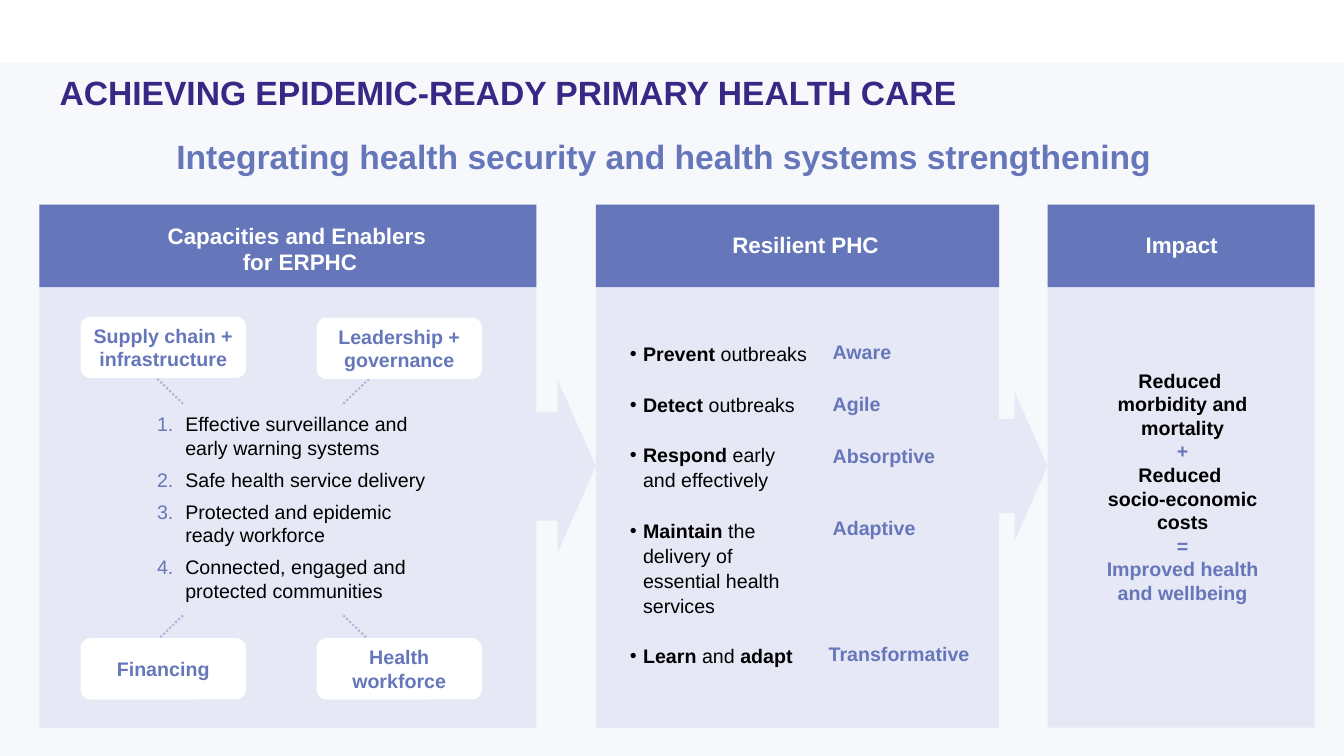
from lxml import etree
from pptx import Presentation
from pptx import util as u
from pptx.dml.color import RGBColor
from pptx.enum import dml, shapes, text
from pptx.oxml import ns

INDIGO = RGBColor(0x38, 0x28, 0x86)
BLUE = RGBColor(0x65, 0x77, 0xBA)
PALE = RGBColor(0xE6, 0xE8, 0xF5)
LILAC = RGBColor(0xB2, 0xB1, 0xD9)
WHITE = RGBColor(0xFF, 0xFF, 0xFF)
BLACK = RGBColor(0, 0, 0)

RECTANGLE = shapes.MSO_SHAPE.RECTANGLE
CALLOUT = shapes.MSO_SHAPE.RIGHT_ARROW_CALLOUT
ROUNDED = shapes.MSO_SHAPE.ROUNDED_RECTANGLE
CENTER = text.PP_ALIGN.CENTER


def inches(*lengths):
    return [u.Inches(length) for length in lengths]


def add_element(parent, tag, **attributes):
    return etree.SubElement(parent, ns.qn(tag), attributes)


class SlideBuilder:
    """Holds the slide and its text style."""

    font = "Arial"
    size = 14

    def __init__(self, slide):
        self.slide = slide

    def runs(self, paragraph, parts, size=None):
        """Add (wording, colour, bold) parts; a newline becomes a line break."""
        for wording, color, bold in parts:
            for index, line in enumerate(wording.split("\n")):
                if index:
                    paragraph.add_line_break()
                if not line:
                    continue
                run = paragraph.add_run()
                run.text = line
                run.font.name = self.font
                run.font.size = u.Pt(size or self.size)
                run.font.bold = bold
                run.font.color.rgb = color

    def title(self, wording, box):
        title = self.slide.shapes.title
        title.left, title.top, title.width, title.height = inches(*box)
        frame = title.text_frame
        frame.margin_left = frame.margin_top = frame.margin_right = 0
        frame.margin_bottom = u.Inches(0.05)
        frame.vertical_anchor = text.MSO_ANCHOR.TOP
        paragraph = frame.paragraphs[0]
        paragraph.alignment = text.PP_ALIGN.LEFT
        paragraph.line_spacing = 0.9
        self.runs(paragraph, [(wording, INDIGO, True)], 24)
        title.element.getparent().append(title.element)  # above the background band

    def shape(self, kind, box, fill, adjustments=()):
        shape = self.slide.shapes.add_shape(kind, *inches(*box))
        shape.shadow.inherit = False
        shape.fill.solid()
        shape.fill.fore_color.rgb = fill
        shape.line.fill.background()
        for index, value in enumerate(adjustments):
            shape.adjustments[index] = value
        return shape

    def band(self, box, fill, opacity):
        shape = self.shape(RECTANGLE, box, fill)
        color = shape.element.spPr.find(".//" + ns.qn("a:srgbClr"))
        add_element(color, "a:alpha", val=str(opacity * 1000))

    def enabler(self, box, wording):
        shape = self.shape(ROUNDED, box, WHITE)
        shape.text_frame.vertical_anchor = text.MSO_ANCHOR.MIDDLE
        paragraph = shape.text_frame.paragraphs[0]
        paragraph.alignment = CENTER
        self.runs(paragraph, [(wording, BLUE, True)])

    def frame(self, box):
        frame = self.slide.shapes.add_textbox(*inches(*box)).text_frame
        frame.word_wrap = True
        frame.auto_size = text.MSO_AUTO_SIZE.SHAPE_TO_FIT_TEXT
        return frame

    def text(self, box, parts, size=None, alignment=None):
        paragraph = self.frame(box).paragraphs[0]
        paragraph.alignment = alignment
        self.runs(paragraph, parts, size)

    def list(self, box, items, indent, hanging, after, spacing=None, numbered=False):
        frame = self.frame(box)
        for index, parts in enumerate(items):
            paragraph = frame.add_paragraph() if index else frame.paragraphs[0]
            properties = paragraph._p.get_or_add_pPr()
            properties.set("marL", str(u.Inches(indent)))
            properties.set("indent", str(-u.Inches(hanging)))
            if numbered:
                color = add_element(properties, "a:buClr")
                add_element(color, "a:srgbClr", val=str(BLUE))
                add_element(properties, "a:buFont", typeface=self.font)
                add_element(properties, "a:buAutoNum", type="arabicPeriod")
            else:
                add_element(properties, "a:buFont", typeface=self.font)
                add_element(properties, "a:buChar", char="•")
            paragraph.space_after = u.Pt(after)
            if spacing:
                paragraph.line_spacing = spacing
            self.runs(paragraph, parts)

    def dotted_line(self, start, end):
        line = self.slide.shapes.add_connector(
            shapes.MSO_CONNECTOR.STRAIGHT, *inches(*start, *end))
        line.line.color.rgb = LILAC
        line.line.width = u.Pt(1.5)
        line.line.dash_style = dml.MSO_LINE.ROUND_DOT
        add_element(line.element.spPr, "a:effectLst")


def main():
    presentation = Presentation()
    presentation.slide_width, presentation.slide_height = inches(13.33, 7.5)
    builder = SlideBuilder(presentation.slides.add_slide(presentation.slide_layouts[5]))

    builder.band((0, 0.62, 13.33, 6.88), PALE, 30)
    builder.title("ACHIEVING EPIDEMIC-READY PRIMARY HEALTH CARE", (0.59, 0.76, 12.15, 0.83))
    builder.text((1.62, 1.3, 10.02, 0.5),
                 [("Integrating health security and health systems strengthening ", BLUE, True)],
                 24, CENTER)

    # Panels and their headings
    top, height, heading_height = 2.03, 5.19, 0.82
    arrow = (0.208, 0.165, 0.073, 0.893)
    panels = [
        (CALLOUT, 5.91, 4.48, arrow, 4, (6.51, 2.24, 2.96, 0.37), "Resilient PHC"),
        (RECTANGLE, 10.39, 2.65, (), 2.65, (10.24, 2.24, 2.96, 0.37), "Impact"),
        (CALLOUT, 0.39, 5.52, arrow, 4.93, (0.89, 2.15, 4.17, 0.64),
         "Capacities and Enablers \nfor ERPHC"),
    ]
    for kind, left, width, adjustments, heading_width, label_box, heading in panels:
        builder.shape(kind, (left, top, width, height), PALE, adjustments)
        builder.shape(RECTANGLE, (left, top, heading_width, heading_height), BLUE)
        builder.text(label_box, [(heading, WHITE, True)], 16, CENTER)

    # Capacities and enablers
    capacities = [
        "Effective surveillance and early warning systems",
        "Safe health service delivery",
        "Protected and epidemic ready workforce",
        "Connected, engaged and protected communities",
    ]
    builder.list((1.36, 4.04, 3, 2), [[(item, BLACK, False)] for item in capacities],
                 indent=0.38, hanging=0.28, after=6, numbered=True)
    for outer_x, inner_x in ((1.5, 1.83), (3.72, 3.39)):
        for outer_y, inner_y in ((3.7, 4.02), (6.41, 6.09)):
            builder.dotted_line((outer_x, outer_y), (inner_x, inner_y))
    for left, y, wording in (
        (0.8, 3.14, "Supply chain + infrastructure"),
        (3.14, 3.15, "Leadership + governance"),
        (0.8, 6.33, "Financing"),
        (3.14, 6.33, "Health workforce"),
    ):
        builder.enabler((left, y, 1.64, 0.61), wording)

    # Resilient primary health care
    actions = [
        [("Prevent ", BLACK, True), ("outbreaks", BLACK, False)],
        [("Detect", BLACK, True), (" outbreaks", BLACK, False)],
        [("Respond ", BLACK, True), ("early and effectively", BLACK, False)],
        [("Maintain ", BLACK, True),
         ("the delivery of essential health services", BLACK, False)],
        [("Learn ", BLACK, True), ("and ", BLACK, False), ("adapt", BLACK, True)],
    ]
    builder.list((6.15, 3.33, 1.97, 3.36), actions,
                 indent=0.13, hanging=0.13, after=18, spacing=1.07)
    for left, y, quality in (
        (8.16, 3.32, "Aware"),
        (8.16, 3.84, "Agile"),
        (8.16, 4.35, "Absorptive"),
        (8.16, 5.07, "Adaptive"),
        (8.12, 6.32, "Transformative"),
    ):
        builder.text((left, y, 2.1, 0.34), [(quality, BLUE, True)])

    # Impact
    builder.text((10.69, 3.61, 2.08, 2.46), [
        ("Reduced \nmorbidity and mortality\n", BLACK, True),
        ("+\n", BLUE, True),
        ("Reduced \nsocio-economic costs\n", BLACK, True),
        ("=\nImproved health and wellbeing", BLUE, True),
    ], alignment=CENTER)

    presentation.save("out.pptx")


if __name__ == "__main__":
    main()
